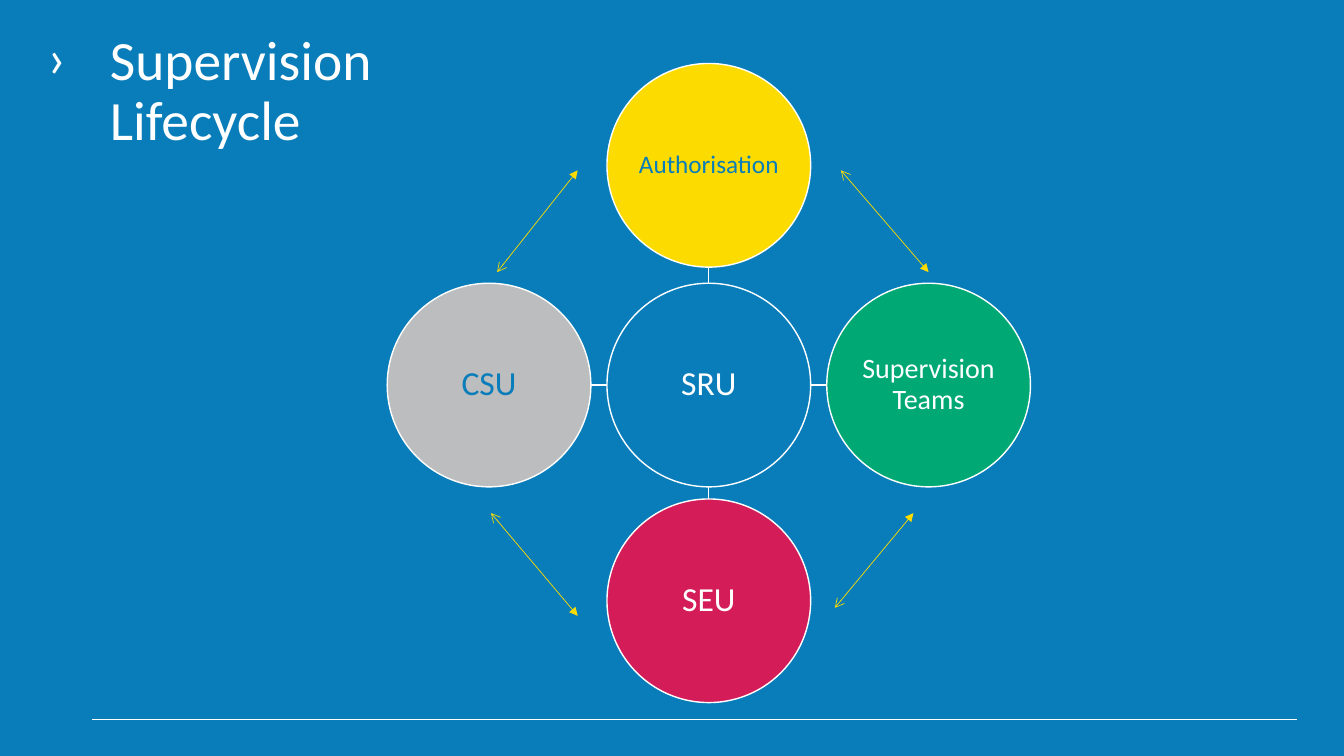
from dataclasses import dataclass

from lxml.etree import SubElement
from pptx import Presentation
from pptx.dml.color import RGBColor
from pptx.enum.shapes import MSO_CONNECTOR, MSO_SHAPE
from pptx.enum.text import MSO_ANCHOR, MSO_AUTO_SIZE, PP_ALIGN
from pptx.oxml.ns import qn
from pptx.util import Inches, Pt


@dataclass(frozen=True)
class Theme:
    blue: RGBColor = RGBColor.from_string("087DBA")
    white: RGBColor = RGBColor.from_string("FFFFFF")
    yellow: RGBColor = RGBColor.from_string("FCDC00")
    green: RGBColor = RGBColor.from_string("00A974")
    red: RGBColor = RGBColor.from_string("D41C59")
    grey: RGBColor = RGBColor.from_string("BBBDBF")
    font: str = "Calibri"
    title: float = 39.6
    large: float = 24
    medium: float = 20
    small: float = 18


theme = Theme()


def write_text(shape, text, size, color, align, inset=None):
    frame = shape.text_frame
    frame.word_wrap = True
    frame.auto_size = MSO_AUTO_SIZE.NONE
    frame.vertical_anchor = MSO_ANCHOR.MIDDLE
    if inset is not None:
        frame.margin_left = frame.margin_right = Inches(inset)
        frame.margin_top = frame.margin_bottom = Inches(inset)
    para = frame.paragraphs[0]
    para.alignment = align
    para.line_spacing = 0.9
    span = para.add_run()
    span.text = text
    span.font.name = theme.font
    span.font.size = Pt(size)
    span.font.color.rgb = color
    return para


def draw_line(start, end, color, width, arrows=False):
    line = page.shapes.add_connector(
        MSO_CONNECTOR.STRAIGHT, *(Inches(value) for value in (*start, *end)))
    line.line.color.rgb = color
    line.line.width = Pt(width)
    if arrows:
        outline = line.line._get_or_add_ln()
        SubElement(outline, qn("a:headEnd"), type="triangle")
        SubElement(outline, qn("a:tailEnd"), type="arrow")
    SubElement(line._element.spPr, qn("a:effectLst"))


# Deck and page
deck = Presentation()
deck.slide_width, deck.slide_height = Inches(13.33), Inches(7.5)
page = deck.slides.add_slide(deck.slide_layouts[5])
page.background.fill.solid()
page.background.fill.fore_color.rgb = theme.blue

# Footer rule
draw_line((0.91, 7.13), (12.86, 7.13), theme.white, 0.25)

# Title with its hanging bullet
title = page.shapes.title
title.left, title.top = Inches(0.37), Inches(0.29)
title.width, title.height = Inches(4.33), Inches(1.25)
para = write_text(title, "Supervision Lifecycle", theme.title, theme.white, PP_ALIGN.LEFT)
properties = para._p.get_or_add_pPr()
properties.set("marL", str(Inches(0.62)))
properties.set("indent", str(-Inches(0.62)))
SubElement(properties, qn("a:buFont"), typeface=theme.font)
SubElement(properties, qn("a:buChar"), char="›")

# Spokes from the hub to each team
diameter = 2.02
radius = diameter / 2
hub_x, hub_y = 7.03, 3.82
side_gap, bottom_gap = 0.16, 0.12
for step_x, step_y, gap in ((0, -1, side_gap), (1, 0, side_gap),
                            (0, 1, bottom_gap), (-1, 0, side_gap)):
    start = (hub_x + step_x * radius, hub_y + step_y * radius)
    end = (start[0] + step_x * gap, start[1] + step_y * gap)
    draw_line(start, end, theme.white, 1)

# Hub and team circles: label, horizontal and vertical offset, fill, text size and colour
reach = diameter + side_gap
circles = (
    ("SRU", 0, 0, theme.blue, theme.large, theme.white),
    ("Authorisation", 0, -reach, theme.yellow, theme.small, theme.blue),
    ("Supervision Teams", reach, 0, theme.green, theme.medium, theme.white),
    ("SEU", 0, diameter + bottom_gap, theme.red, theme.large, theme.white),
    ("CSU", -reach, 0, theme.grey, theme.large, theme.blue),
)
for label, offset_x, offset_y, fill, size, color in circles:
    circle = page.shapes.add_shape(
        MSO_SHAPE.OVAL,
        Inches(hub_x + offset_x - radius), Inches(hub_y + offset_y - radius),
        Inches(diameter), Inches(diameter))
    circle.shadow.inherit = False
    circle.fill.solid()
    circle.fill.fore_color.rgb = fill
    circle.line.color.rgb = theme.white
    circle.line.width = Pt(1)
    write_text(circle, label, size, color, PP_ALIGN.CENTER, inset=0.01)

# Two-way arrows between neighbouring teams
for start, end in (
    ((5.73, 1.69), (4.93, 2.7)),
    ((9.06, 5.09), (8.28, 6.03)),
    ((9.21, 2.7), (8.34, 1.69)),
    ((5.73, 6.11), (4.87, 5.09)),
):
    draw_line(start, end, theme.yellow, 0.5, arrows=True)

deck.save("out.pptx")
